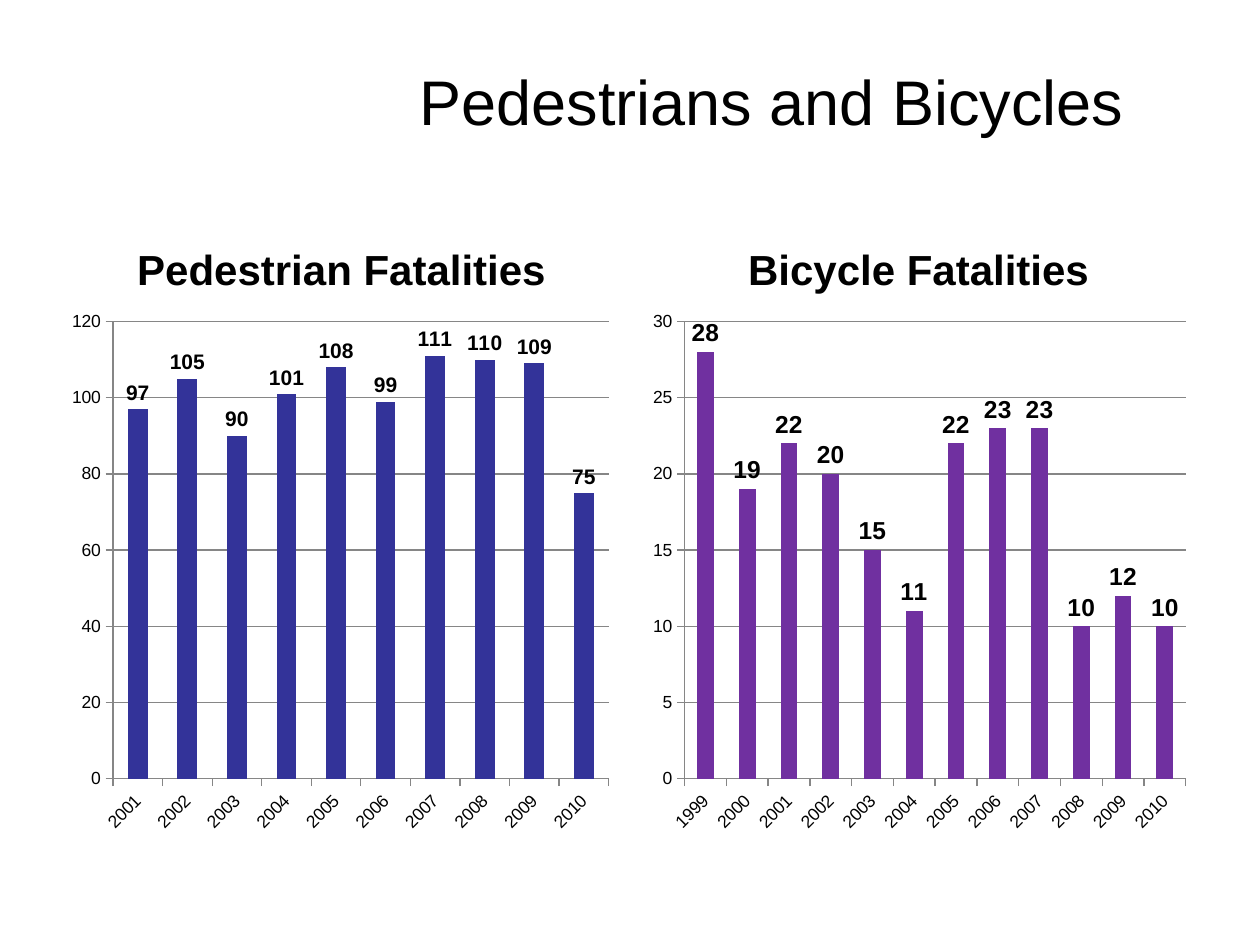
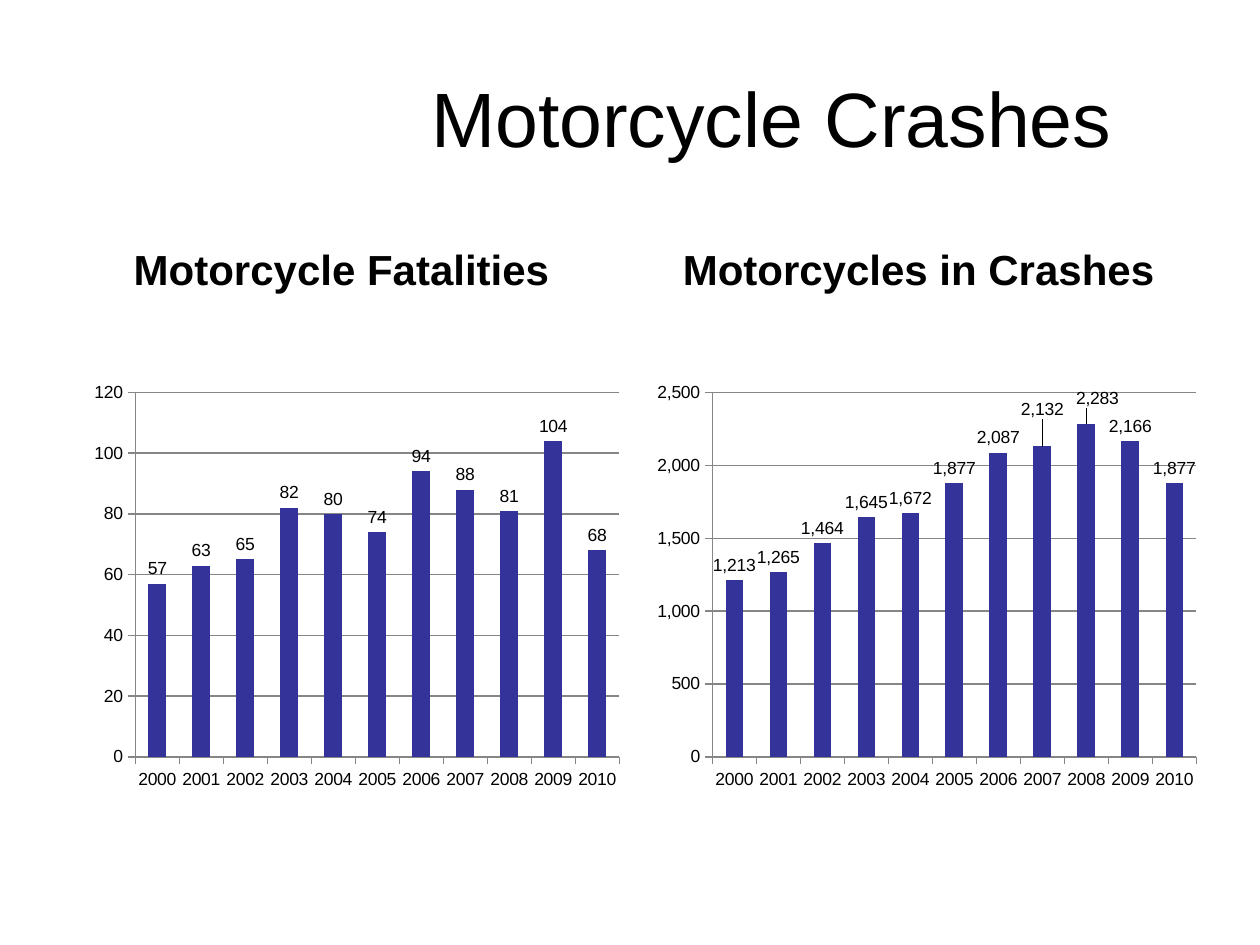
"""Build two slides of column charts on road fatalities and crashes."""
from dataclasses import dataclass

from pptx import Presentation
from pptx import util as u
from pptx.chart.data import CategoryChartData
from pptx.dml.color import RGBColor
from pptx.enum import chart as ch, text
from pptx.oxml import parse_xml
from pptx.oxml.ns import nsdecls

PX = 9144
COMPARISON = 4


@dataclass(frozen=True)
class Theme:
    font: str = "Arial"
    ink: str = "000000"
    grid: str = "868686"
    blue: str = "333399"
    purple: str = "7030A0"
    title: int = 44
    small_title: int = 36
    heading: int = 24
    axis: int = 10
    label: int = 12
    large_label: int = 14


THEME = Theme()
COLUMNS = (50, 508)
COLUMN_W = 442
HEADING_TOP, HEADING_H = 168, 70
CHART_TOP, CHART_H = 238, 432
LOW_PLOT = (0.13, 0.17, 0.87, 0.67)


def style_font(font, size, bold=False, color=THEME.ink):
    font.name, font.size, font.bold = THEME.font, u.Pt(size), bold
    font.color.rgb = RGBColor.from_string(color)


def write(sp, words, *, size, bold=False, anchor=text.MSO_ANCHOR.MIDDLE):
    tf = sp.text_frame
    tf.word_wrap = True
    tf.auto_size = text.MSO_AUTO_SIZE.NONE
    tf.vertical_anchor = anchor
    p = tf.paragraphs[0]
    p.alignment = text.PP_ALIGN.CENTER
    p.space_before = u.Pt(0)
    r = p.add_run()
    r.text = words
    style_font(r.font, size, bold)


def layout_xml(plot=False, **values):
    target = '<c:layoutTarget val="inner"/>' if plot else ""
    modes = '<c:xMode val="edge"/><c:yMode val="edge"/>' if plot else ""
    sizes = "".join(f'<c:{key} val="{value}"/>' for key, value in values.items())
    return parse_xml(f'<c:layout {nsdecls("c")}><c:manualLayout>'
                     f'{target}{modes}{sizes}</c:manualLayout></c:layout>')


class Deck:
    """Holds the theme, the presentation and the current slide."""

    def __init__(self, theme):
        self.theme = theme
        self.prs = Presentation()
        self.prs.slide_width, self.prs.slide_height = 1000 * PX, 750 * PX

    def slide(self):
        self.s = self.prs.slides.add_slide(self.prs.slide_layouts[COMPARISON])
        for idx in (2, 4):
            sp = self.s.placeholders[idx]._element
            sp.getparent().remove(sp)

    def place(self, sp, x, y, w, h):
        sp.left, sp.top, sp.width, sp.height = (n * PX for n in (x, y, w, h))

    def title(self, words, top, size):
        sp = self.s.shapes.title
        self.place(sp, 275, top, 675, 125)
        write(sp, words, size=size)

    def heading(self, words, column):
        sp = self.s.placeholders[1 + 2 * column]
        self.place(sp, COLUMNS[column], HEADING_TOP, COLUMN_W, HEADING_H)
        write(sp, words, size=self.theme.heading, bold=True,
              anchor=text.MSO_ANCHOR.BOTTOM)

    def axis(self, axis, rotation=0):
        style_font(axis.tick_labels.font, self.theme.axis)
        axis.major_tick_mark = ch.XL_TICK_MARK.OUTSIDE
        axis.minor_tick_mark = ch.XL_TICK_MARK.NONE
        self.line(axis.format.line)
        body = axis._element.xpath("c:txPr/a:bodyPr")[0]
        body.set("rot", str(rotation * 60000))

    def line(self, line):
        line.width = u.Pt(0.75)
        line.color.rgb = RGBColor.from_string(self.theme.grid)

    def chart(self, column, first_year, values, *, top, step, plot, color=THEME.blue,
              label=THEME.axis, bold=False, rotation=0, fmt="General", nudges=()):
        data = CategoryChartData(number_format=fmt)
        data.categories = [str(first_year + i) for i in range(len(values))]
        data.add_series("Series 1", values)
        box = (COLUMNS[column], CHART_TOP, COLUMN_W, CHART_H)
        chart = self.s.shapes.add_chart(ch.XL_CHART_TYPE.COLUMN_CLUSTERED,
                                        *(n * PX for n in box), data).chart
        chart.has_title = chart.has_legend = False
        style_font(chart.font, self.theme.axis)

        self.axis(chart.category_axis, rotation)
        axis = chart.value_axis
        self.axis(axis)
        axis.minimum_scale, axis.maximum_scale, axis.major_unit = 0, top, step
        axis.tick_labels.number_format = fmt
        axis.tick_labels.number_format_is_linked = False
        axis.has_major_gridlines = True
        self.line(axis.major_gridlines.format.line)

        bars = chart.plots[0]
        bars.gap_width, bars.vary_by_categories = 150, False
        series = bars.series[0]
        series.format.fill.solid()
        series.format.fill.fore_color.rgb = RGBColor.from_string(color)
        labels = series.data_labels
        labels.show_value = True
        labels.position = ch.XL_LABEL_POSITION.OUTSIDE_END
        style_font(labels.font, label, bold)
        for i, x, y in nudges:
            point = series.points[i].data_label
            point.position = ch.XL_LABEL_POSITION.OUTSIDE_END
            style_font(point.font, label, bold)
            labels._element.xpath(f'c:dLbl[c:idx/@val="{i}"]')[0].insert(
                1, layout_xml(x=x, y=y))

        area = chart._chartSpace.xpath("c:chart/c:plotArea")[0]
        for old in area.xpath("c:layout"):
            area.remove(old)
        area.insert(0, layout_xml(plot=True, **dict(zip("xywh", plot))))


def main():
    deck = Deck(THEME)

    deck.slide()
    deck.title("Pedestrians and Bicycles", 17, THEME.small_title)
    deck.heading("Pedestrian Fatalities", 0)
    deck.heading("Bicycle Fatalities", 1)
    deck.chart(0, 2001, (97, 105, 90, 101, 108, 99, 111, 110, 109, 75),
               top=120, step=20, plot=(0.09, 0.04, 0.89, 0.84),
               label=THEME.label, bold=True, rotation=-45)
    deck.chart(1, 1999, (28, 19, 22, 20, 15, 11, 22, 23, 23, 10, 12, 10),
               top=30, step=5, plot=(0.08, 0.04, 0.9, 0.84), color=THEME.purple,
               label=THEME.large_label, bold=True, rotation=-45)

    deck.slide()
    deck.title("Motorcycle Crashes", 30, THEME.title)
    deck.heading("Motorcycle Fatalities", 0)
    deck.heading("Motorcycles in Crashes", 1)
    deck.chart(0, 2000, (57, 63, 65, 82, 80, 74, 94, 88, 81, 104, 68),
               top=120, step=20, plot=LOW_PLOT)
    deck.chart(1, 2000, (1213, 1265, 1464, 1645, 1672, 1877, 2087, 2132, 2283,
                         2166, 1877),
               top=2500, step=500, plot=LOW_PLOT, fmt="#,##0",
               nudges=((7, 0, -0.04), (8, 0.02, -0.02)))

    deck.prs.save("out.pptx")


if __name__ == "__main__":
    main()
